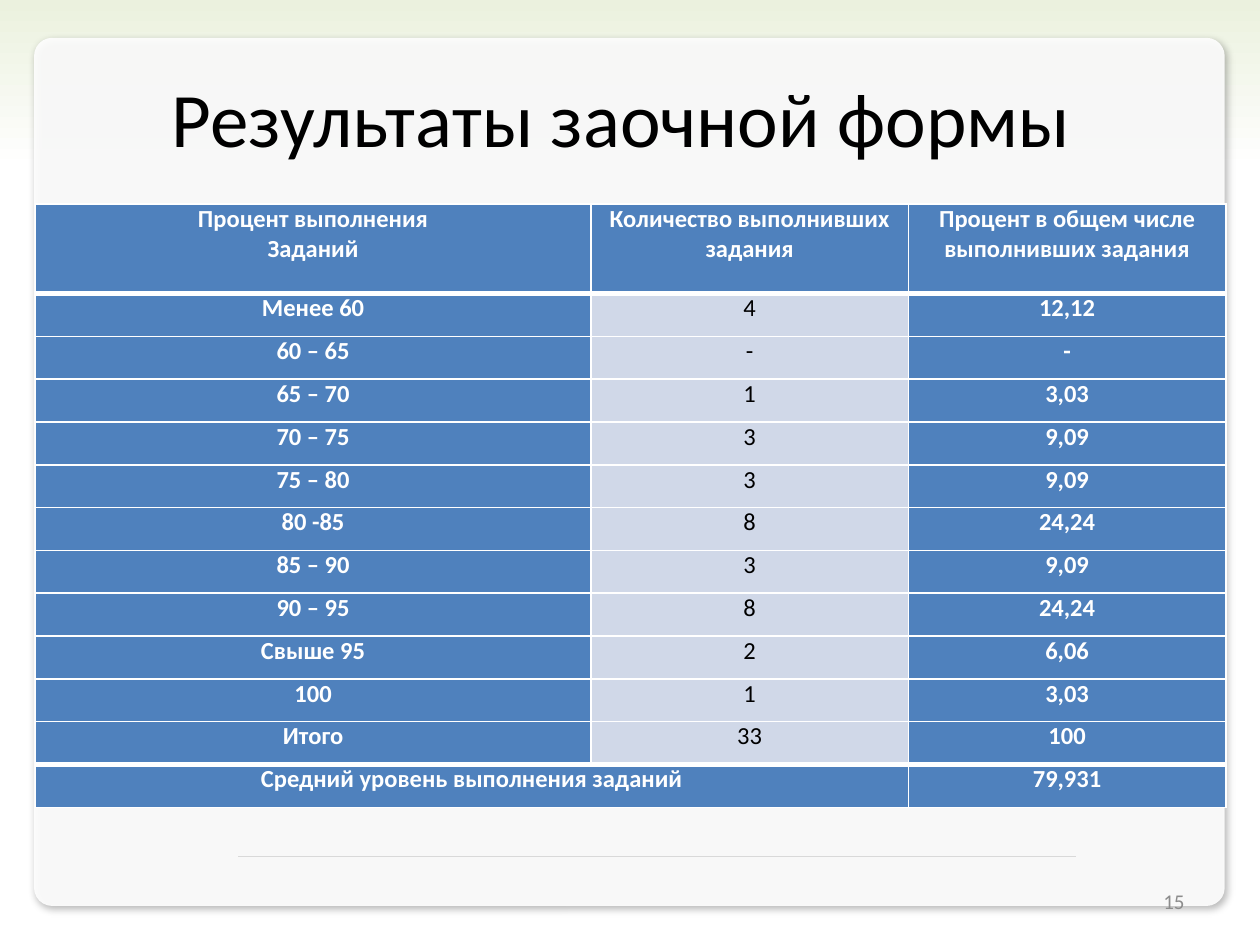
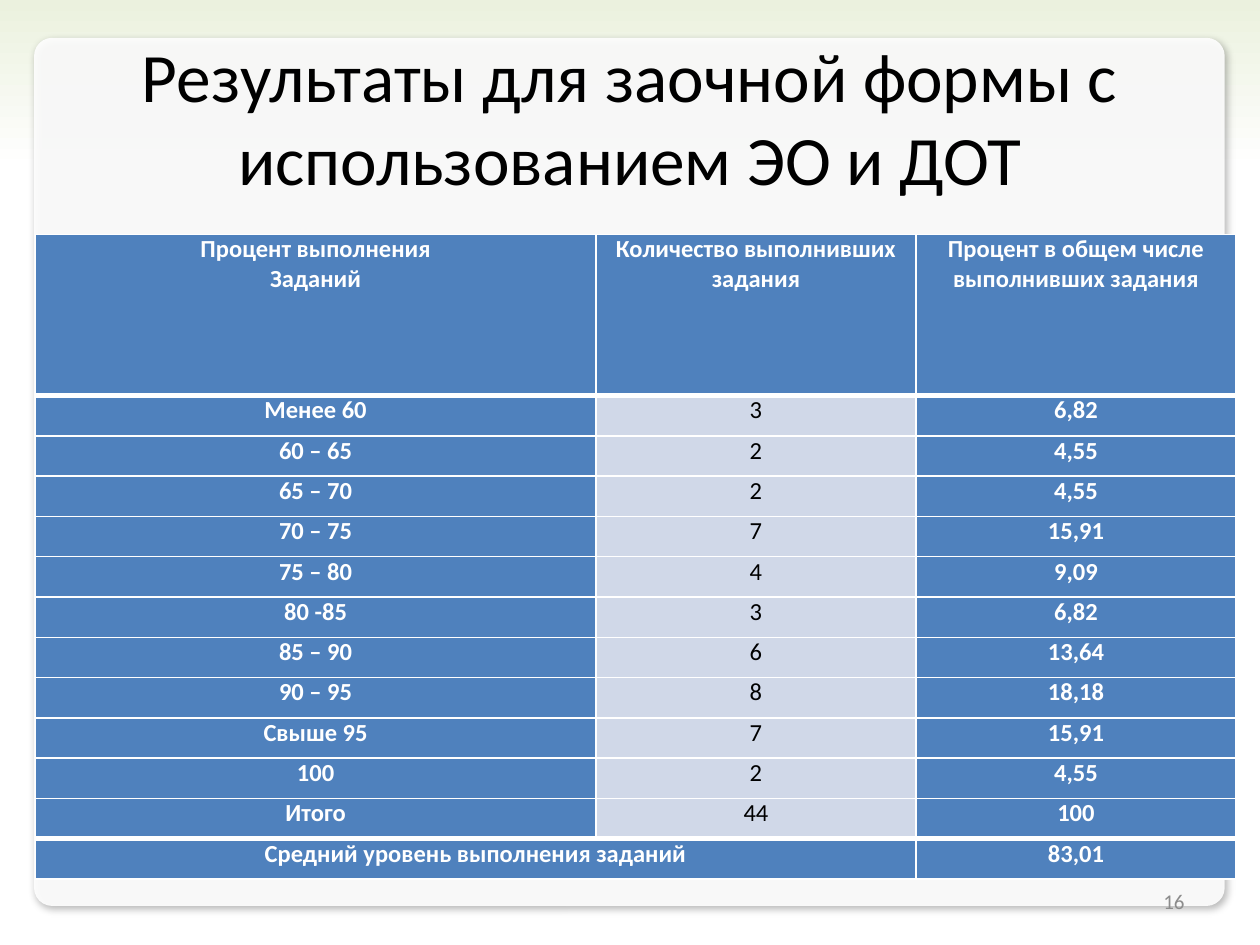
from dataclasses import dataclass

from lxml.etree import SubElement
from pptx import Presentation
from pptx.dml.color import RGBColor
from pptx.enum.shapes import MSO_CONNECTOR, MSO_SHAPE
from pptx.enum.text import MSO_ANCHOR, MSO_AUTO_SIZE, PP_ALIGN
from pptx.oxml import parse_xml
from pptx.oxml.ns import nsdecls, qn
from pptx.presentation import Presentation as Deck
from pptx.slide import Slide
from pptx.table import _Cell as Cell
from pptx.text.text import TextFrame
from pptx.util import Inches, Pt

# Shared colours, font and wording
WHITE = RGBColor(0xFF, 0xFF, 0xFF)
BLACK = RGBColor(0x00, 0x00, 0x00)
PALE_GREEN = RGBColor(0xEB, 0xF1, 0xDE)
RULE_GREY = RGBColor(0xD9, 0xD9, 0xD9)
NUMBER_GREY = RGBColor(0x8C, 0x8C, 0x8C)
BLUE = RGBColor(0x4F, 0x81, 0xBD)
PALE_BLUE = RGBColor(0xD0, 0xD8, 0xE8)
FONT = "Calibri"

HEADINGS = (
    "Процент выполнения\nЗаданий",
    "Количество выполнивших задания",
    "Процент в общем числе выполнивших задания",
)
BANDS = (
    "Менее 60", "60 – 65", "65 – 70", "70 – 75", "75 – 80", "80 -85",
    "85 – 90", "90 – 95", "Свыше 95", "100", "Итого",
)
AVERAGE_LABEL = "Средний уровень выполнения заданий"
THIN, THICK = 1, 3


@dataclass(frozen=True)
class ResultSlide:
    number: int
    title: str
    title_size: float
    table_top: float
    column_widths: tuple[float, float, float]
    header_height: float
    row_height: float
    counts: tuple[str, ...]
    shares: tuple[str, ...]
    average: str


RESULTS = (
    ResultSlide(
        15, "Результаты заочной формы ", 44, 1.62, (4.41, 2.52, 2.52), 0.71, 0.34,
        ("4", "-", "1", "3", "3", "8", "3", "8", "2", "1", "33"),
        ("12,12", "-", "3,03", "9,09", "9,09", "24,24", "9,09", "24,24",
         "6,06", "3,03", "100"),
        "79,931",
    ),
    ResultSlide(
        16, "Результаты для заочной формы с использованием ЭО и ДОТ", 39.6,
        1.86, (4.45, 2.54, 2.54), 1.28, 0.32,
        ("3", "2", "2", "7", "4", "3", "6", "8", "7", "2", "44"),
        ("6,82", "4,55", "4,55", "15,91", "9,09", "6,82", "13,64", "18,18",
         "15,91", "4,55", "100"),
        "83,01",
    ),
)


def write_text(frame: TextFrame, text: str, alignment: PP_ALIGN, size: float,
               color: RGBColor, bold: bool = False) -> None:
    frame.text = text
    frame.word_wrap = True
    font_format = {"name": FONT, "size": Pt(size), "bold": bold}
    for paragraph in frame.paragraphs:
        paragraph.alignment = alignment
        for run in paragraph.runs:
            for name, value in font_format.items():
                setattr(run.font, name, value)
            run.font.color.rgb = color


def draw_backdrop(slide: Slide) -> None:
    # Background fading from green to white
    fill = slide.background.fill
    fill.gradient()
    fill.gradient_angle = 270
    for stop, position, color in zip(fill.gradient_stops, (0, 0.18), (PALE_GREEN, WHITE)):
        stop.position = position
        stop.color.rgb = color

    # Translucent panel with a soft shadow
    panel = slide.shapes.add_shape(
        MSO_SHAPE.ROUNDED_RECTANGLE, Inches(0.27), Inches(0.3), Inches(9.45), Inches(6.89))
    panel.adjustments[0] = 0.021
    panel.fill.solid()
    panel.fill.fore_color.rgb = WHITE
    panel.line.fill.background()
    properties = panel.element.spPr
    SubElement(properties.find(f".//{qn('a:srgbClr')}"), qn("a:alpha"), val="90000")
    properties.append(parse_xml(
        f'<a:effectLst {nsdecls("a")}>'
        f'<a:outerShdw blurRad="{Pt(4.5)}" dist="{Pt(2.6)}" dir="{53 * 60000}" '
        'algn="tl" rotWithShape="0">'
        f'<a:srgbClr val="{BLACK}"><a:alpha val="30000"/></a:srgbClr>'
        '</a:outerShdw></a:effectLst>'))

    # Rule near the foot of the panel
    rule = slide.shapes.add_connector(
        MSO_CONNECTOR.STRAIGHT, Inches(1.89), Inches(6.8), Inches(8.54), Inches(6.8))
    rule.line.color.rgb = RULE_GREY
    rule.line.width = Pt(0.75)
    SubElement(rule.element.spPr, qn("a:effectLst"))


def draw_title(slide: Slide, result: ResultSlide) -> None:
    title = slide.shapes.title
    place = {"left": Inches(0.5), "top": Inches(0.3),
             "width": Inches(9), "height": Inches(1.25)}
    for name, value in place.items():
        setattr(title, name, value)
    title.text_frame.auto_size = MSO_AUTO_SIZE.NONE
    title.text_frame.vertical_anchor = MSO_ANCHOR.MIDDLE
    write_text(title.text_frame, result.title, PP_ALIGN.CENTER, result.title_size, BLACK)
    # Bring the title in front of the panel
    title.element.getparent().append(title.element)


def draw_number(slide: Slide, number: int) -> None:
    box = slide.shapes.add_textbox(Inches(7.17), Inches(6.95), Inches(2.33), Inches(0.4))
    box.text_frame.vertical_anchor = MSO_ANCHOR.MIDDLE
    write_text(box.text_frame, str(number), PP_ALIGN.RIGHT, 12, NUMBER_GREY)


def set_borders(cell: Cell, top: int, bottom: int) -> None:
    properties = cell._tc.get_or_add_tcPr()
    for side, width in {"L": THIN, "R": THIN, "T": top, "B": bottom}.items():
        properties.append(parse_xml(
            f'<a:ln{side} {nsdecls("a")} w="{Pt(width)}"><a:solidFill>'
            f'<a:srgbClr val="{WHITE}"/></a:solidFill></a:ln{side}>'))


def draw_table(slide: Slide, result: ResultSlide) -> None:
    rows = [HEADINGS, *zip(BANDS, result.counts, result.shares),
            (AVERAGE_LABEL, "", result.average)]
    last = len(rows) - 1
    heights = [result.header_height] + [result.row_height] * last
    table = slide.shapes.add_table(
        len(rows), len(HEADINGS), Inches(0.28), Inches(result.table_top),
        Inches(sum(result.column_widths)), Inches(sum(heights))).table
    table.first_row = table.horz_banding = False
    for column, width in zip(table.columns, result.column_widths):
        column.width = Inches(width)
    for row, height in zip(table.rows, heights):
        row.height = Inches(height)

    # Heavy borders set off the header and the average
    cell_format = {"margin_left": Inches(0.07), "margin_right": Inches(0.07),
                   "margin_top": 0, "margin_bottom": 0,
                   "vertical_anchor": MSO_ANCHOR.TOP}
    for row_index, texts in enumerate(rows):
        top = THICK if row_index in (1, last) else THIN
        bottom = THICK if row_index in (0, last - 1) else THIN
        for column_index, text in enumerate(texts):
            cell = table.cell(row_index, column_index)
            is_count = column_index == 1 and 0 < row_index < last
            for name, value in cell_format.items():
                setattr(cell, name, value)
            set_borders(cell, top, bottom)
            cell.fill.solid()
            cell.fill.fore_color.rgb = PALE_BLUE if is_count else BLUE
            write_text(cell.text_frame, text, PP_ALIGN.CENTER, 14,
                       BLACK if is_count else WHITE, not is_count)
    table.cell(last, 0).merge(table.cell(last, 1))


def add_result_slide(presentation: Deck, result: ResultSlide) -> None:
    slide = presentation.slides.add_slide(presentation.slide_layouts.get_by_name("Title Only"))
    draw_backdrop(slide)
    draw_title(slide, result)
    draw_number(slide, result.number)
    draw_table(slide, result)


def main() -> None:
    presentation = Presentation()
    presentation.slide_width = Inches(10)
    presentation.slide_height = Inches(7.5)
    for result in RESULTS:
        add_result_slide(presentation, result)
    presentation.save("out.pptx")


if __name__ == "__main__":
    main()
